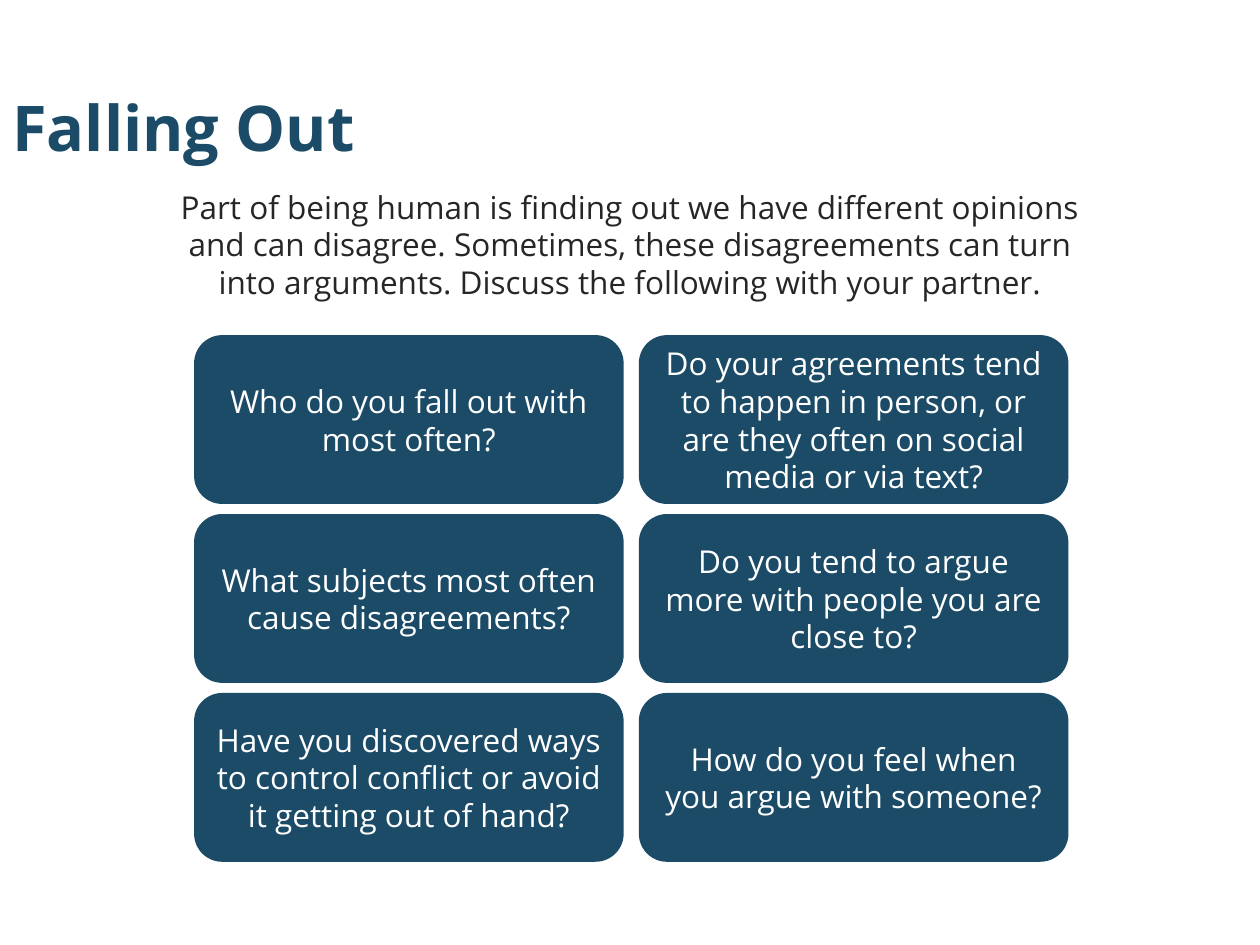
"""Build the Falling Out discussion slide."""
from dataclasses import dataclass

from pptx import Presentation
from pptx.dml.color import RGBColor
from pptx.enum.shapes import MSO_SHAPE as Shape
from pptx.enum.text import MSO_ANCHOR as Anchor, PP_ALIGN as Align
from pptx.util import Inches, Pt


@dataclass(frozen=True)
class Theme:
    """Colours, font and type sizes of the slide."""
    navy: RGBColor = RGBColor.from_string("1B4B67")
    ink: RGBColor = RGBColor.from_string("262626")
    white: RGBColor = RGBColor.from_string("FFFFFF")
    font: str = "Open Sans"
    title_size: int = 36
    body_size: int = 18


def write(box, text, *, font, size, color, bold=False, align=Align.CENTER,
          anchor=Anchor.TOP, side_inset=0.1, space_after=0):
    """Put one formatted paragraph into a shape."""
    frame = box.text_frame
    frame.word_wrap = True
    frame.vertical_anchor = anchor
    frame.margin_left = frame.margin_right = Inches(side_inset)
    para = frame.paragraphs[0]
    para.alignment = align
    para.space_after = Pt(space_after)
    span = para.add_run()
    span.text = text
    span.font.name = font
    span.font.size = Pt(size)
    span.font.bold = bold
    span.font.color.rgb = color


class SlideBuilder:
    """Holds the theme and the current slide."""

    def __init__(self, page, theme):
        """Keep the page and its style."""
        self.page = page
        self.theme = theme

    def title(self, text, left, top, width, height):
        """Add the slide heading."""
        box = self.page.shapes.add_textbox(*map(Inches, (left, top, width, height)))
        write(box, text, font=self.theme.font, size=self.theme.title_size,
              color=self.theme.navy, bold=True, align=Align.LEFT, anchor=Anchor.MIDDLE)

    def intro(self, text, left, top, width, height):
        """Add the introductory paragraph."""
        box = self.page.shapes.add_textbox(*map(Inches, (left, top, width, height)))
        write(box, text, font=self.theme.font, size=self.theme.body_size,
              color=self.theme.ink, side_inset=0, space_after=6)

    def card(self, text, left, top, width, height):
        """Add a rounded question card."""
        box = self.page.shapes.add_shape(
            Shape.ROUNDED_RECTANGLE, *map(Inches, (left, top, width, height)))
        box.shadow.inherit = False
        box.fill.solid()
        box.fill.fore_color.rgb = self.theme.navy
        box.line.fill.background()
        write(box, text, font=self.theme.font, size=self.theme.body_size,
              color=self.theme.white, anchor=Anchor.MIDDLE)


QUESTIONS = (
    ("Who do you fall out with most often?",
     "Do your agreements tend to happen in person, or are they often on social "
     "media or via text?"),
    ("What subjects most often cause disagreements?",
     "Do you tend to argue more with people you are close to?"),
    ("Have you discovered ways to control conflict or avoid it getting out of hand?",
     "How do you feel when you argue with someone?"),
)


def main():
    """Create and save the deck."""
    deck = Presentation()
    deck.slide_width, deck.slide_height = Inches(10), Inches(7.5)
    page = deck.slides.add_slide(deck.slide_layouts[6])
    builder = SlideBuilder(page, Theme())
    builder.title("Falling Out", 0, 0.66, 10, 0.68)
    builder.intro(
        "Part of being human is finding out we have different opinions and can "
        "disagree. Sometimes, these disagreements can turn into arguments. "
        "Discuss the following with your partner.", 1.34, 1.44, 7.32, 1.01)
    width, height, column_gap, row_gap = 3.41, 1.34, 0.12, 0.08
    for row, questions in enumerate(QUESTIONS):
        for column, question in enumerate(questions):
            builder.card(question, 1.54 + column * (width + column_gap),
                         2.66 + row * (height + row_gap), width, height)
    deck.save("out.pptx")


if __name__ == "__main__":
    main()
